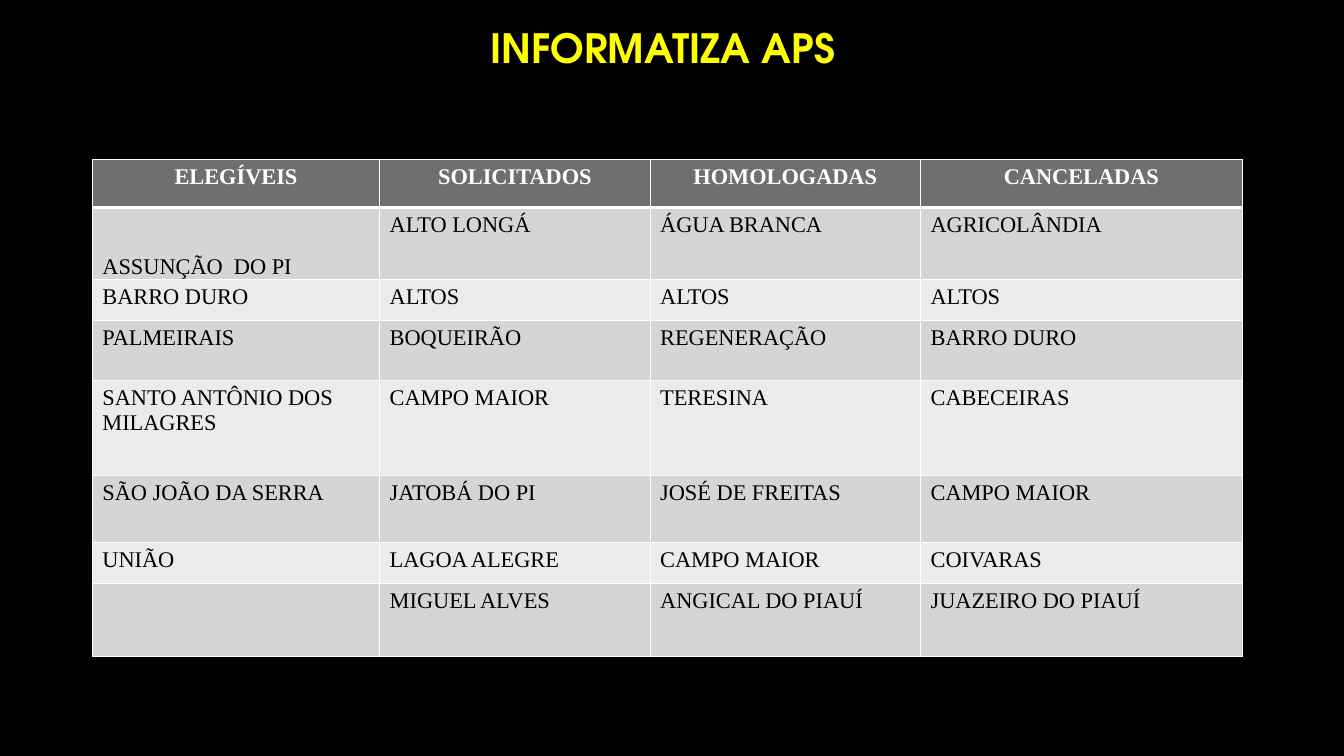
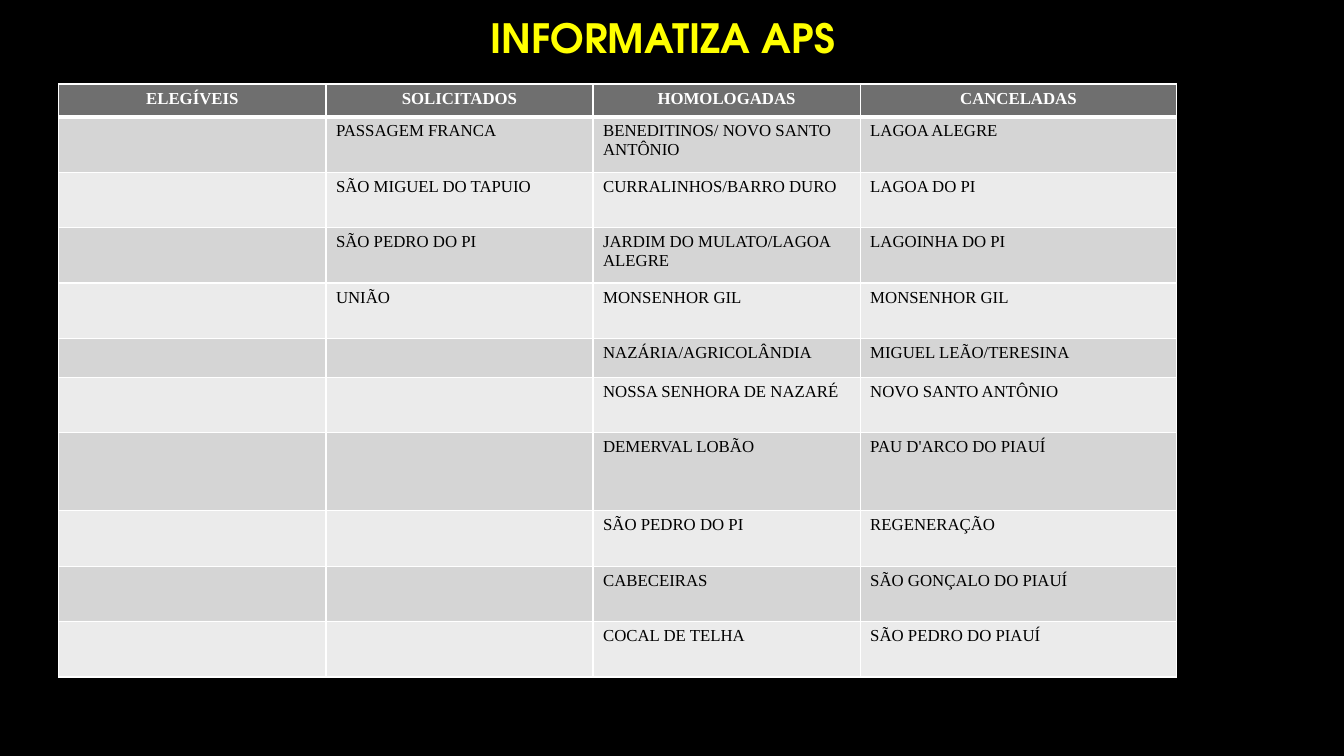
"""Build two slides of municipality tables for the INFORMATIZA APS programme."""
from dataclasses import dataclass
from typing import Any

from lxml.etree import SubElement
from pptx import Presentation
from pptx.dml.color import RGBColor
from pptx.enum.text import MSO_ANCHOR as Anchor, MSO_AUTO_SIZE as AutoSize, PP_ALIGN as Align
from pptx.oxml.ns import qn
from pptx.util import Emu, Pt

BLACK = RGBColor(0x00, 0x00, 0x00)
WHITE = RGBColor(0xFF, 0xFF, 0xFF)
YELLOW = RGBColor(0xFF, 0xFF, 0x00)
HEADER_GREY = RGBColor(0x6F, 0x6F, 0x6F)
BANDS = (RGBColor(0xD5, 0xD5, 0xD5), RGBColor(0xEB, 0xEB, 0xEB))

CELL = 76200
GRID_COLUMNS, GRID_ROWS = 160, 90
TITLE_ONLY = 5
TITLE = "INFORMATIZA APS"
TITLE_LEFT, TITLE_TOP, TITLE_WIDTH = 33, 2, 91.8
TITLE_FONT = {"name": "TeX Gyre Adventor", "size": Pt(28.8), "bold": True}
TABLE_FONT = "Times New Roman"
HEADINGS = ("ELEGÍVEIS", "SOLICITADOS", "HOMOLOGADAS", "CANCELADAS")
THIN, THICK = 1, 3


@dataclass(frozen=True)
class TablePage:
    """One slide: measures in grid cells, text size in points."""
    title_height: float
    left: float
    top: float
    columns: tuple[float, ...]
    rows: tuple[float, ...]
    size: int
    body: tuple[tuple[str, ...], ...]
    low_cells: tuple[tuple[int, int], ...] = ()


PAGES = (
    TablePage(
        title_height=7.3, left=11, top=19,
        columns=(34.2, 32.2, 32.2, 38.3),
        rows=(5.7, 8.6, 4.9, 7.1, 11.3, 8, 4.9, 8.7),
        size=16,
        body=(
            ("ASSUNÇÃO  DO PI", "ALTO LONGÁ", "ÁGUA BRANCA", "AGRICOLÂNDIA"),
            ("BARRO DURO", "ALTOS", "ALTOS", "ALTOS"),
            ("PALMEIRAIS", "BOQUEIRÃO", "REGENERAÇÃO", "BARRO DURO"),
            ("SANTO ANTÔNIO DOS MILAGRES", "CAMPO MAIOR", "TERESINA", "CABECEIRAS"),
            ("SÃO JOÃO DA SERRA", "JATOBÁ DO PI", "JOSÉ DE FREITAS", "CAMPO MAIOR"),
            ("UNIÃO", "LAGOA ALEGRE", "CAMPO MAIOR", "COIVARAS"),
            ("", "MIGUEL ALVES", "ANGICAL DO PIAUÍ", "JUAZEIRO DO PIAUÍ"),
        ),
        low_cells=((1, 0),),
    ),
    TablePage(
        title_height=5, left=7, top=10,
        columns=(31.8, 31.8, 31.8, 37.7),
        rows=(3.9, *[6.6] * 4, 4.6, 6.6, 9.3, *[6.6] * 3),
        size=12,
        body=(
            ("", "PASSAGEM FRANCA", "BENEDITINOS/ NOVO SANTO ANTÔNIO", "LAGOA ALEGRE"),
            ("", "SÃO MIGUEL DO TAPUIO", "CURRALINHOS/BARRO DURO", "LAGOA DO PI"),
            ("", "SÃO PEDRO DO PI", "JARDIM DO MULATO/LAGOA ALEGRE", "LAGOINHA DO PI"),
            ("", "UNIÃO", "MONSENHOR GIL", "MONSENHOR GIL"),
            ("", "", "NAZÁRIA/AGRICOLÂNDIA", "MIGUEL LEÃO/TERESINA"),
            ("", "", "NOSSA SENHORA DE NAZARÉ", "NOVO SANTO ANTÔNIO"),
            ("", "", "DEMERVAL LOBÃO", "PAU D'ARCO DO PIAUÍ"),
            ("", "", "SÃO PEDRO DO PI", "REGENERAÇÃO"),
            ("", "", "CABECEIRAS", "SÃO GONÇALO DO PIAUÍ"),
            ("", "", "COCAL DE TELHA", "SÃO PEDRO DO PIAUÍ"),
        ),
    ),
)


def grid(cells: float) -> Emu:
    """Turn grid cells into a slide length."""
    return Emu(round(cells * CELL))


def apply(target: Any, formats: dict[str, Any]) -> None:
    """Set every attribute named in formats."""
    for name, value in formats.items():
        setattr(target, name, value)


def write(para: Any, text: str, font: dict[str, Any], color: RGBColor) -> None:
    """Add one formatted span to a paragraph."""
    span = para.add_run()
    span.text = text
    apply(span.font, font)
    span.font.color.rgb = color


def draw_title(page: Any, height: float) -> None:
    """Place and format the title placeholder."""
    box = page.shapes.title
    apply(box, {"left": grid(TITLE_LEFT), "top": grid(TITLE_TOP),
                "width": grid(TITLE_WIDTH), "height": grid(height)})
    apply(box.text_frame, {"vertical_anchor": Anchor.MIDDLE, "word_wrap": True,
                           "auto_size": AutoSize.NONE})
    para = box.text_frame.paragraphs[0]
    para.alignment = Align.CENTER
    write(para, TITLE, TITLE_FONT, YELLOW)


def draw_borders(cell: Any, top: int, bottom: int) -> None:
    """Give a table cell white borders of the given widths."""
    properties = cell._tc.get_or_add_tcPr()
    for side, width in {"L": THIN, "R": THIN, "T": top, "B": bottom}.items():
        line = SubElement(properties, qn(f"a:ln{side}"), w=str(Pt(width)))
        fill = SubElement(line, qn("a:solidFill"))
        SubElement(fill, qn("a:srgbClr"), val=str(WHITE))


def draw_cell(cell: Any, text: str, row: int, size: int) -> None:
    """Format one header or body cell."""
    header = row == 0
    draw_borders(cell, THICK if row == 1 else THIN, THICK if header else THIN)
    cell.fill.solid()
    cell.fill.fore_color.rgb = HEADER_GREY if header else BANDS[(row - 1) % 2]
    para = cell.text_frame.paragraphs[0]
    para.alignment = Align.CENTER if header else Align.LEFT
    if text:
        font = {"name": TABLE_FONT, "size": Pt(size), "bold": header}
        write(para, text, font, WHITE if header else BLACK)
    else:
        SubElement(para._p, qn("a:endParaRPr"), sz=str(size * 100))


def draw_table(page: Any, plan: TablePage) -> None:
    """Draw the banded table of a slide."""
    frame = page.shapes.add_table(
        len(plan.rows), len(plan.columns), grid(plan.left), grid(plan.top),
        grid(sum(plan.columns)), grid(sum(plan.rows)))
    table = frame.table
    for column, width in zip(table.columns, plan.columns):
        column.width = grid(width)
    for row, height in zip(table.rows, plan.rows):
        row.height = grid(height)
    for row, texts in enumerate((HEADINGS, *plan.body)):
        for column, text in enumerate(texts):
            draw_cell(table.cell(row, column), text, row, plan.size)
    for row, column in plan.low_cells:
        apply(table.cell(row, column), {"vertical_anchor": Anchor.BOTTOM,
                                        "margin_top": 0, "margin_bottom": 0})


def main() -> None:
    """Build and save the deck."""
    deck = Presentation()
    apply(deck, {"slide_width": grid(GRID_COLUMNS), "slide_height": grid(GRID_ROWS)})
    backdrop = deck.slide_master.background.fill
    backdrop.solid()
    backdrop.fore_color.rgb = BLACK
    for plan in PAGES:
        page = deck.slides.add_slide(deck.slide_layouts[TITLE_ONLY])
        draw_title(page, plan.title_height)
        draw_table(page, plan)
    deck.save("out.pptx")


if __name__ == "__main__":
    main()
